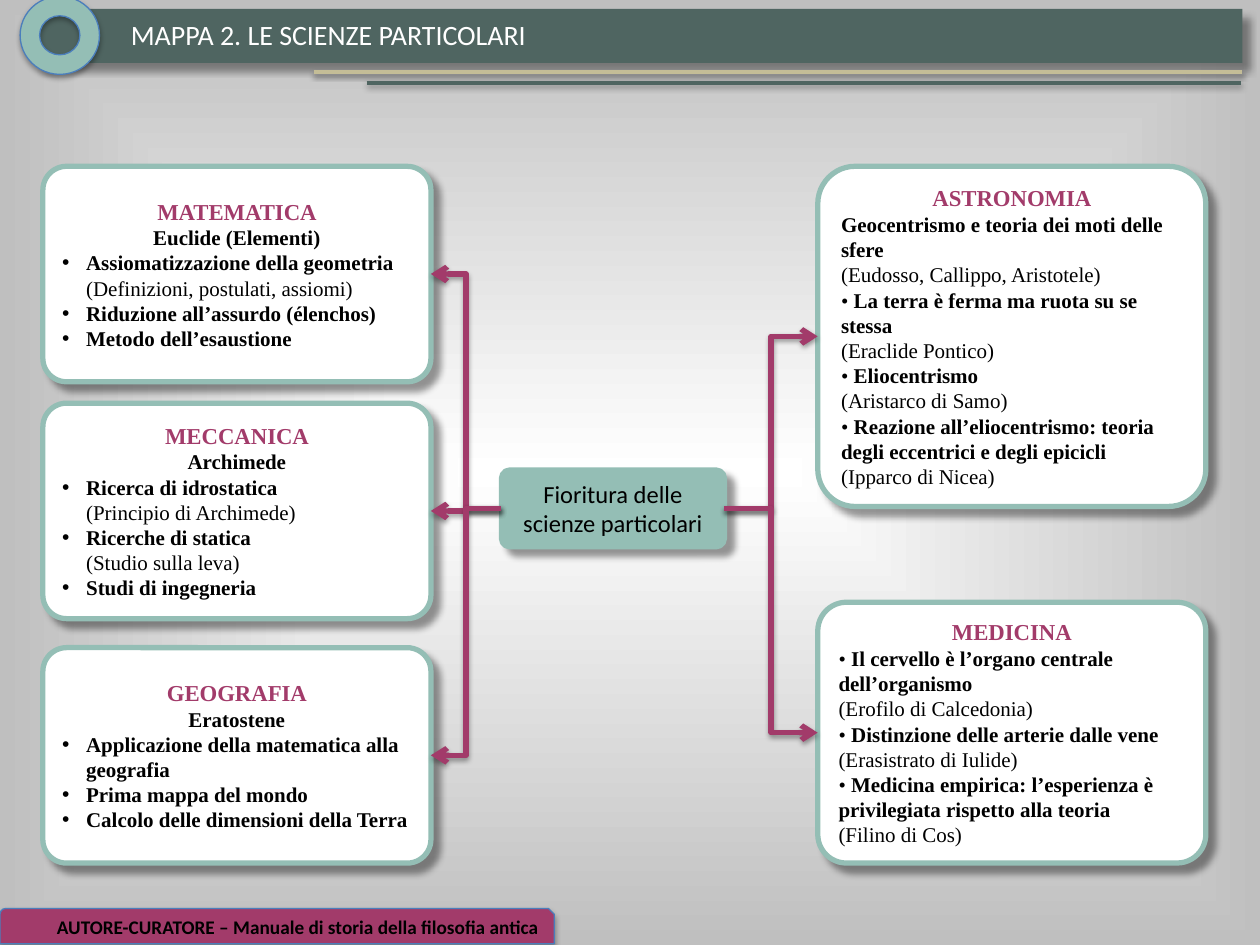
from collections import namedtuple

from lxml import etree
from pptx import Presentation
from pptx import util as u
from pptx.dml.color import RGBColor
from pptx.enum import shapes, text
from pptx.oxml import parse_xml
from pptx.oxml.ns import qn

COLORS = {
    "slate": "4F6561", "sage": "94BEB5", "plum": "A23B6A", "sand": "C4BD97",
    "blue": "4B7EBC", "white": "FFFFFF", "black": "000000", "gray": "BFBFBF",
}
COLUMNS, ROWS = 100, 75
CELL = u.Inches(10) // COLUMNS
SERIF, SANS = "Times New Roman", "Calibri"
CARD_SHADOW = (40, 4, 6, 45)
BADGE_SHADOW = (35, 3.1, 1.8, 90)
LINE_SHADOW = (38, 3.1, 1.6, 90)
SHAPE = shapes.MSO_SHAPE
ALIGN = text.PP_ALIGN

Box = namedtuple("Box", "left top width height")
LEFT_COLUMN = Box(3.4, 13.2, 30.8, 17.1)
RIGHT_COLUMN = Box(64.9, 13.2, 30.8, 27)

LEFT_CARDS = [
    (13.2, "MATEMATICA", "Euclide (Elementi)", [
        ("Assiomatizzazione della geometria ", "(Definizioni, postulati, assiomi)"),
        ("Riduzione all’assurdo (élenchos)", ""),
        ("Metodo dell’esaustione", "")]),
    (32, "MECCANICA", "Archimede", [
        ("Ricerca di idrostatica", "(Principio di Archimede)"),
        ("Ricerche di statica", "(Studio sulla leva)"),
        ("Studi di ingegneria", "")]),
    (51.4, "GEOGRAFIA", "Eratostene", [
        ("Applicazione della matematica alla geografia", ""),
        ("Prima mappa del mondo", ""),
        ("Calcolo delle dimensioni della Terra", "")]),
]
RIGHT_CARDS = [
    (13.2, 27, "ASTRONOMIA", [
        ("", "Geocentrismo e teoria dei moti delle sfere", "(Eudosso, Callippo, Aristotele)"),
        ("• ", "La terra è ferma ma ruota su se stessa", "(Eraclide Pontico)"),
        ("• ", "Eliocentrismo", "(Aristarco di Samo)"),
        ("• ", "Reazione all’eliocentrismo: teoria degli eccentrici e degli epicicli",
         "(Ipparco di Nicea)")]),
    (47.8, 20.7, "MEDICINA", [
        ("• ", "Il cervello è l’organo centrale dell’organismo", "(Erofilo di Calcedonia)"),
        ("• ", "Distinzione delle arterie dalle vene", "(Erasistrato di Iulide)"),
        ("• ", "Medicina empirica: l’esperienza è privilegiata rispetto alla teoria",
         "(Filino di Cos)")]),
]


def grid(*cells):
    return [round(cell * CELL) for cell in cells]


def rgb(name):
    return RGBColor.from_string(COLORS[name])


def add_shadow(shape, alpha, blur, distance, angle):
    properties = shape._element.spPr
    effects = properties.find(qn("a:effectLst"))
    if effects is None:
        effects = etree.SubElement(properties, qn("a:effectLst"))
    shadow = etree.SubElement(
        effects, qn("a:outerShdw"), blurRad=str(u.Pt(blur)), dist=str(u.Pt(distance)),
        dir=str(angle * 60000), algn="ctr", rotWithShape="0")
    color = etree.SubElement(shadow, qn("a:srgbClr"), val=COLORS["black"])
    etree.SubElement(color, qn("a:alpha"), val=str(alpha * 1000))


def add_block(slide, kind, box, fill, line=None, width=0.75, shadow=CARD_SHADOW):
    shape = slide.shapes.add_shape(kind, *grid(*box))
    shape.fill.solid()
    shape.fill.fore_color.rgb = rgb(fill)
    if line:
        shape.line.color.rgb = rgb(line)
        shape.line.width = u.Pt(width)
    else:
        shape.line.fill.background()
    shape.shadow.inherit = False
    add_shadow(shape, *shadow)
    shape.text_frame.word_wrap = True
    shape.text_frame.vertical_anchor = text.MSO_ANCHOR.MIDDLE
    return shape


def add_line(slide, kind, ends, color, width):
    line = slide.shapes.add_connector(kind, *grid(*ends))
    line.line.color.rgb = rgb(color)
    line.line.width = u.Pt(width)
    add_shadow(line, *LINE_SHADOW)
    return line


def new_paragraph(frame, align=ALIGN.LEFT):
    first = frame.paragraphs[0]
    paragraph = frame.add_paragraph() if first.runs else first
    paragraph.alignment = align
    return paragraph


def write(paragraph, words, size=12, font=SERIF, color="black", bold=False):
    run = paragraph.add_run()
    run.text = words
    run.font.size = u.Pt(size)
    run.font.name = font
    run.font.bold = bold
    run.font.color.rgb = rgb(color)


def add_bullet(paragraph):
    properties = paragraph._p.get_or_add_pPr()
    indent = u.Inches(0.19)
    properties.set("marL", str(indent))
    properties.set("indent", str(-indent))
    etree.SubElement(properties, qn("a:buFont"), typeface="Arial")
    etree.SubElement(properties, qn("a:buChar"), char="•")


def paint_background(slide):
    stops = "".join(
        f'<a:gs pos="{position}"><a:srgbClr val="{COLORS[name]}"/></a:gs>'
        for position, name in ((0, "white"), (100000, "gray")))
    slide.element.cSld.insert(0, parse_xml(
        '<p:bg xmlns:p="http://schemas.openxmlformats.org/presentationml/2006/main"'
        ' xmlns:a="http://schemas.openxmlformats.org/drawingml/2006/main"><p:bgPr>'
        f'<a:gradFill rotWithShape="1"><a:gsLst>{stops}</a:gsLst><a:path path="shape">'
        '<a:fillToRect l="50000" t="50000" r="50000" b="50000"/></a:path></a:gradFill>'
        '<a:effectLst/></p:bgPr></p:bg>'))


def add_header(slide, box):
    left, top, width, height = box
    right = left + width
    add_block(slide, SHAPE.RECTANGLE, (left + 1.3, top + 1, width - 1.3, 4.3), "slate")
    for start, end, drop, color in ((23.3, right, 6, "sand"), (27.5, right - 0.1, 6.9, "slate")):
        add_line(slide, shapes.MSO_CONNECTOR.STRAIGHT,
                 (left + start, top + drop, end, top + drop), color, 2)
    title = slide.shapes.add_textbox(*grid(left + 7.8, top + 1.2, 34.2, 3.7))
    title.text_frame.word_wrap = False
    title.text_frame.auto_size = text.MSO_AUTO_SIZE.SHAPE_TO_FIT_TEXT
    write(new_paragraph(title.text_frame), "MAPPA 2. LE SCIENZE PARTICOLARI",
          size=16, font=SANS, color="white")
    add_block(slide, SHAPE.DONUT, (left, top, 6.3, 6.2), "sage", "blue", shadow=BADGE_SHADOW)


def add_footer(slide, box):
    footer = add_block(slide, SHAPE.SNIP_ROUND_RECTANGLE, box, "plum", "blue",
                       shadow=BADGE_SHADOW)
    write(new_paragraph(footer.text_frame, ALIGN.RIGHT),
          "AUTORE-CURATORE – Manuale di storia della filosofia antica",
          size=11, font=SANS, bold=True)


def add_card(slide, box, heading=None, fill="white"):
    card = add_block(slide, SHAPE.ROUNDED_RECTANGLE, box, fill, "sage", 3)
    card.adjustments[0] = 0.11
    if heading:
        write(new_paragraph(card.text_frame, ALIGN.CENTER), heading,
              size=13, color="plum", bold=True)
    return card


def add_left_card(slide, box, heading, scholar, points):
    card = add_card(slide, box, heading)
    write(new_paragraph(card.text_frame, ALIGN.CENTER), scholar, bold=True)
    for point, note in points:
        paragraph = new_paragraph(card.text_frame)
        add_bullet(paragraph)
        write(paragraph, point, bold=True)
        if note:
            paragraph.add_line_break()
            write(paragraph, note)
    return card


def add_right_card(slide, box, heading, theories):
    card = add_card(slide, box, heading)
    for mark, theory, author in theories:
        paragraph = new_paragraph(card.text_frame)
        if mark:
            write(paragraph, mark)
        write(paragraph, theory, bold=True)
        write(new_paragraph(card.text_frame), author)
    return card


def add_hub(slide, box):
    hub = add_card(slide, box, fill="sage")
    write(new_paragraph(hub.text_frame, ALIGN.CENTER),
          "Fioritura delle scienze particolari", size=14, font=SANS)
    return hub


def join(slide, hub, hub_side, card, card_side):
    arrow = add_line(slide, shapes.MSO_CONNECTOR.ELBOW, (0, 0, 1, 1), "plum", 3)
    arrow.begin_connect(hub, hub_side)
    arrow.end_connect(card, card_side)
    etree.SubElement(arrow.line._get_or_add_ln(), qn("a:tailEnd"), type="arrow")


def main():
    presentation = Presentation()
    presentation.slide_width, presentation.slide_height = grid(COLUMNS, ROWS)
    slide = presentation.slides.add_slide(presentation.slide_layouts[6])
    paint_background(slide)
    add_footer(slide, Box(0, 72.1, 44, 2.8))
    add_header(slide, Box(1.6, -0.3, 97, 6.9))
    left_cards = [add_left_card(slide, LEFT_COLUMN._replace(top=top), *content)
                  for top, *content in LEFT_CARDS]
    right_cards = [add_right_card(slide, RIGHT_COLUMN._replace(top=top, height=height), *content)
                   for top, height, *content in RIGHT_CARDS]
    hub = add_hub(slide, Box(39.8, 37.3, 17.7, 6.1))
    for cards, hub_side, card_side in ((right_cards, 3, 1), (left_cards, 1, 3)):
        for card in cards:
            join(slide, hub, hub_side, card, card_side)
    presentation.save("out.pptx")


if __name__ == "__main__":
    main()
